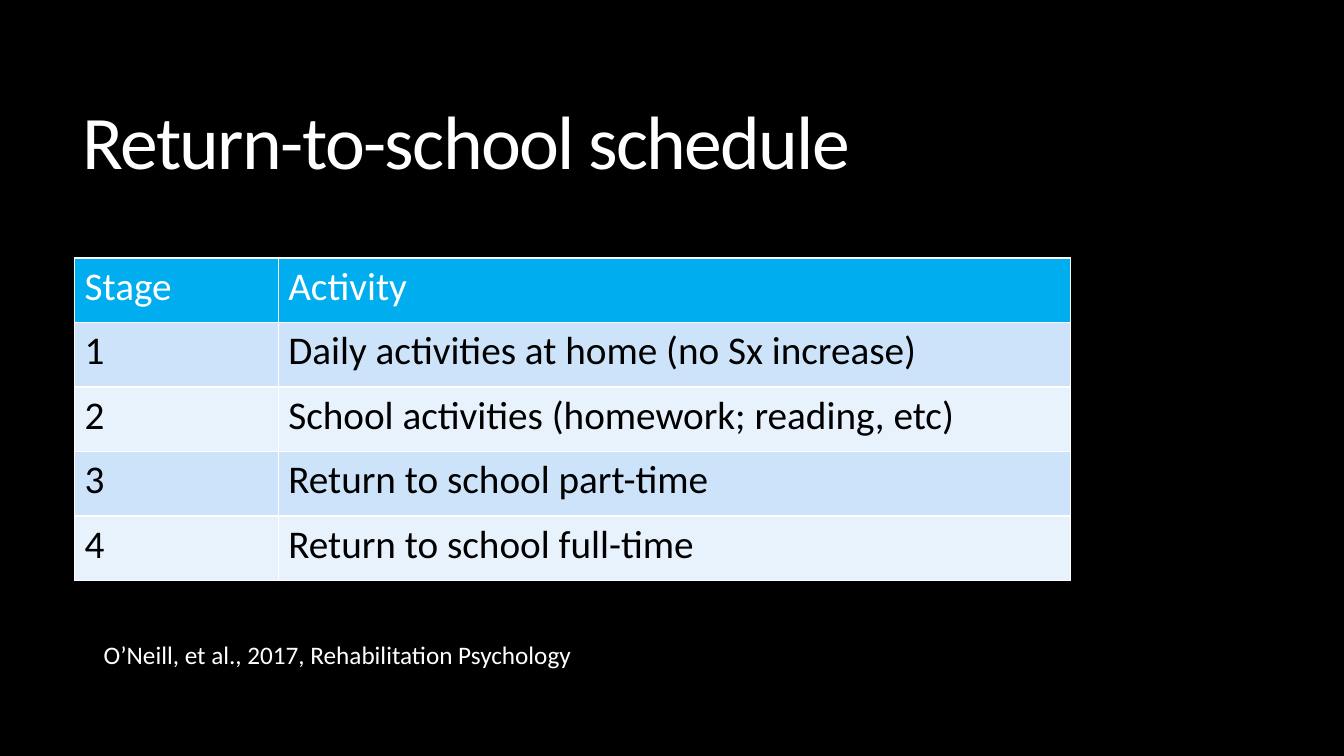
from lxml.etree import SubElement
from pptx import Presentation
from pptx.dml.color import RGBColor
from pptx.enum.text import MSO_ANCHOR as Anchor, PP_ALIGN as Align
from pptx.oxml.ns import qn
from pptx.util import Inches, Pt

# Content
TITLE = "Return-to-school schedule"
SCHEDULE = [
    ("Stage", "Activity"),
    ("1", "Daily activities at home (no Sx increase)"),
    ("2", "School activities (homework; reading, etc)"),
    ("3", "Return to school part-time"),
    ("4", "Return to school full-time"),
]
CITATION = "O’Neill, et al., 2017, Rehabilitation Psychology"

# Look
FONT = "Calibri"
BLACK = RGBColor(0x00, 0x00, 0x00)
WHITE = RGBColor(0xFF, 0xFF, 0xFF)
HEADER_BLUE = RGBColor(0x00, 0xAE, 0xEF)
BANDS = [RGBColor(0xE7, 0xF2, 0xFC), RGBColor(0xCC, 0xE3, 0xF9)]
COLUMN_WIDTHS = (2.02, 7.86)
ROW_HEIGHT = 0.64


def write(frame, text, size, color=WHITE, line_spacing=1.0, tracking=None):
    frame.word_wrap = True
    paragraph = frame.paragraphs[0]
    paragraph.alignment = Align.LEFT
    paragraph.line_spacing = line_spacing
    run = paragraph.add_run()
    run.text = text
    font = run.font
    font.name, font.size, font.bold = FONT, Pt(size), False
    font.color.rgb = color
    if tracking is not None:
        font._element.set("spc", str(int(tracking * 100)))


def add_borders(cell):
    properties = cell._tc.get_or_add_tcPr()
    for index, side in enumerate(("lnL", "lnR", "lnT", "lnB")):
        line = properties.makeelement(qn(f"a:{side}"), {"w": str(Pt(1))})
        fill = SubElement(line, qn("a:solidFill"))
        SubElement(fill, qn("a:srgbClr"), val=str(WHITE))
        properties.insert(index, line)


def main():
    deck = Presentation()
    deck.slide_width, deck.slide_height = Inches(13.33), Inches(7.5)
    slide = deck.slides.add_slide(deck.slide_layouts[5])
    slide.background.fill.solid()
    slide.background.fill.fore_color.rgb = BLACK

    # Title
    title = slide.shapes.title
    title.left, title.top = Inches(0.72), Inches(0.55)
    title.width, title.height = Inches(11.78), Inches(1.81)
    title.text_frame.vertical_anchor = Anchor.MIDDLE
    write(title.text_frame, TITLE, 54, line_spacing=0.85, tracking=-1.2)

    # Schedule table
    schedule = slide.shapes.add_table(
        len(SCHEDULE), len(COLUMN_WIDTHS), Inches(0.74), Inches(2.56),
        Inches(sum(COLUMN_WIDTHS)), Inches(ROW_HEIGHT * len(SCHEDULE))).table
    for column, width in zip(schedule.columns, COLUMN_WIDTHS):
        column.width = Inches(width)
    for r, entries in enumerate(SCHEDULE):
        for c, entry in enumerate(entries):
            cell = schedule.cell(r, c)
            cell.fill.solid()
            cell.fill.fore_color.rgb = BANDS[r % 2] if r else HEADER_BLUE
            add_borders(cell)
            write(cell.text_frame, entry, 28, color=BLACK if r else WHITE)

    # Citation
    citation = slide.shapes.add_textbox(
        Inches(0.93), Inches(6.29), Inches(5.54), Inches(0.71))
    write(citation.text_frame, CITATION, 18)

    deck.save("out.pptx")


if __name__ == "__main__":
    main()
